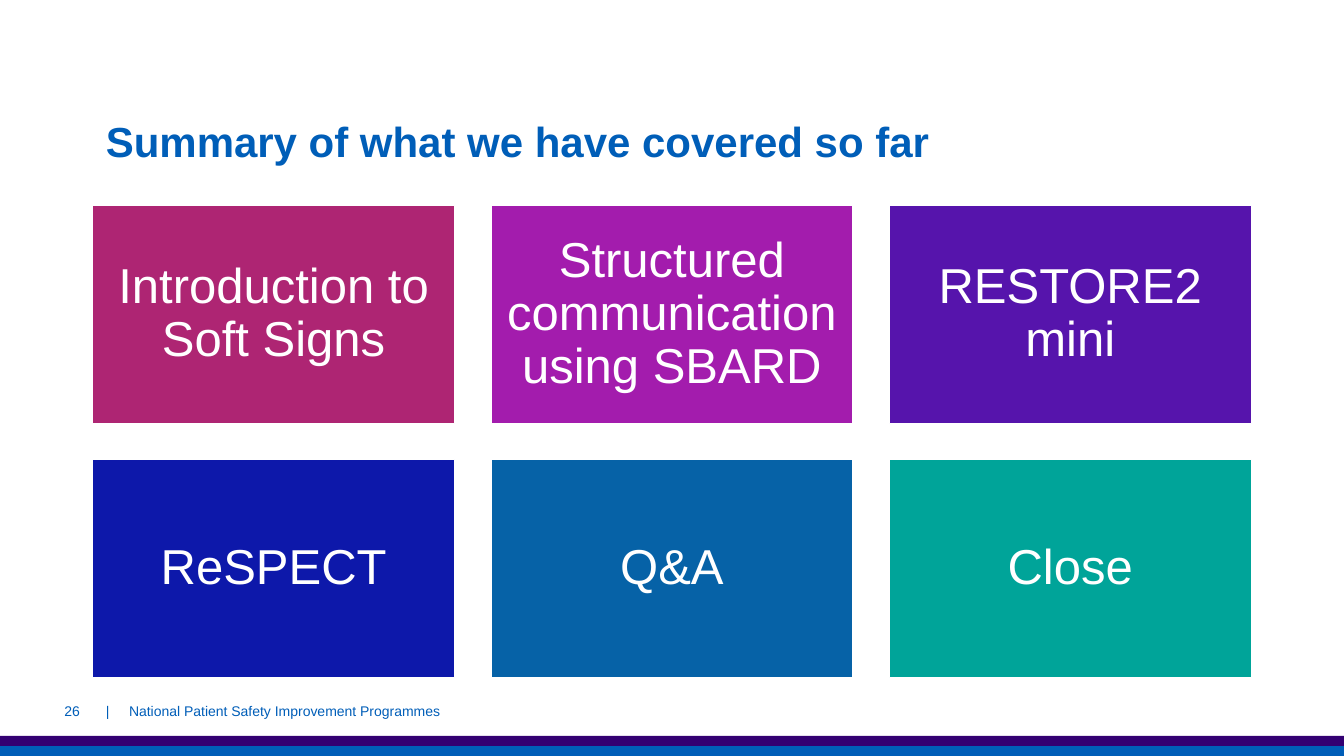
from dataclasses import dataclass

from lxml import etree
from pptx import Presentation
from pptx.dml.color import RGBColor
from pptx.enum.shapes import MSO_SHAPE
from pptx.enum.text import MSO_ANCHOR, PP_ALIGN
from pptx.oxml.ns import qn
from pptx.shapes.autoshape import Shape
from pptx.slide import Slide
from pptx.util import Pt

EMU_PER_PX = 9144  # 100 px to the inch
SLIDE_WIDTH, SLIDE_HEIGHT = 1333, 750

WHITE = RGBColor(0xFF, 0xFF, 0xFF)
BLUE = RGBColor(0x00, 0x5E, 0xB8)
NAVY = RGBColor(0x33, 0x00, 0x72)
PINK = RGBColor(0xAE, 0x25, 0x73)
MAGENTA = RGBColor(0xA3, 0x1C, 0xAD)
VIOLET = RGBColor(0x56, 0x14, 0xAC)
INDIGO = RGBColor(0x0D, 0x18, 0xAA)
OCEAN = RGBColor(0x06, 0x62, 0xA7)
TEAL = RGBColor(0x00, 0xA4, 0x99)

COLUMNS = 3
GRID_LEFT, GRID_TOP = 92, 204
TILE_WIDTH, TILE_HEIGHT, TILE_GAP = 359, 216, 36


@dataclass(frozen=True)
class Box:
    left: int
    top: int
    width: int
    height: int

    def emu(self) -> tuple[int, int, int, int]:
        return px(self.left), px(self.top), px(self.width), px(self.height)


@dataclass(frozen=True)
class Topic:
    name: str
    color: RGBColor


TOPICS = [
    Topic("Introduction to Soft Signs", PINK),
    Topic("Structured communication using SBARD", MAGENTA),
    Topic("RESTORE2 mini", VIOLET),
    Topic("ReSPECT", INDIGO),
    Topic("Q&A", OCEAN),
    Topic("Close", TEAL),
]


def px(length: int) -> int:
    return length * EMU_PER_PX


def add_rectangle(slide: Slide, box: Box, color: RGBColor) -> Shape:
    rectangle = slide.shapes.add_shape(MSO_SHAPE.RECTANGLE, *box.emu())
    rectangle.shadow.inherit = False
    rectangle.fill.solid()
    rectangle.fill.fore_color.rgb = color
    rectangle.line.fill.background()
    return rectangle


def write(shape: Shape, text: str, size: int, color: RGBColor, *,
          align: PP_ALIGN = PP_ALIGN.LEFT, anchor: MSO_ANCHOR = MSO_ANCHOR.MIDDLE,
          margins: tuple[int, int] = (0, 5), spacing: float = 1.0,
          bold: bool = False, tab: int = 0) -> None:
    """Fill a shape with one paragraph; margins are (side, top and bottom)."""
    frame = shape.text_frame
    frame.word_wrap = True
    frame.vertical_anchor = anchor
    frame.margin_left = frame.margin_right = px(margins[0])
    frame.margin_top = frame.margin_bottom = px(margins[1])
    paragraph = frame.paragraphs[0]
    paragraph.text = text
    paragraph.alignment = align
    paragraph.line_spacing = spacing
    if tab:
        tabs = etree.SubElement(paragraph._p.get_or_add_pPr(), qn("a:tabLst"))
        etree.SubElement(tabs, qn("a:tab"), pos=str(px(tab)), algn="l")
    font = paragraph.font
    font.name = "Arial"
    font.size = Pt(size)
    font.bold = bold
    font.color.rgb = color


def add_text(slide: Slide, box: Box) -> Shape:
    return slide.shapes.add_textbox(*box.emu())


def add_topic(slide: Slide, index: int, topic: Topic) -> None:
    row, column = divmod(index, COLUMNS)
    box = Box(GRID_LEFT + column * (TILE_WIDTH + TILE_GAP),
              GRID_TOP + row * (TILE_HEIGHT + TILE_GAP),
              TILE_WIDTH, TILE_HEIGHT)
    tile = add_rectangle(slide, box, topic.color)
    tile.line.color.rgb = WHITE
    tile.line.width = Pt(1)
    write(tile, topic.name, 35, WHITE, align=PP_ALIGN.CENTER,
          margins=(15, 15), spacing=0.9)


def main() -> None:
    deck = Presentation()
    deck.slide_width, deck.slide_height = px(SLIDE_WIDTH), px(SLIDE_HEIGHT)
    slide = deck.slides.add_slide(deck.slide_layouts[6])

    add_rectangle(slide, Box(0, 740, SLIDE_WIDTH, 10), BLUE)
    add_rectangle(slide, Box(0, 730, SLIDE_WIDTH, 10), NAVY)

    for index, topic in enumerate(TOPICS):
        add_topic(slide, index, topic)

    title = add_text(slide, Box(105, 120, 1176, 98))
    write(title, "Summary of what we have covered so far", 30, BLUE,
          anchor=MSO_ANCHOR.TOP, margins=(0, 0), spacing=0.9, bold=True)
    programme = add_text(slide, Box(105, 685, 450, 40))
    write(programme, "|\tNational Patient Safety Improvement Programmes", 10, BLUE, tab=23)
    page_number = add_text(slide, Box(13, 685, 76, 40))
    write(page_number, "26", 10, BLUE, align=PP_ALIGN.RIGHT, margins=(10, 5))

    deck.save("out.pptx")


if __name__ == "__main__":
    main()
